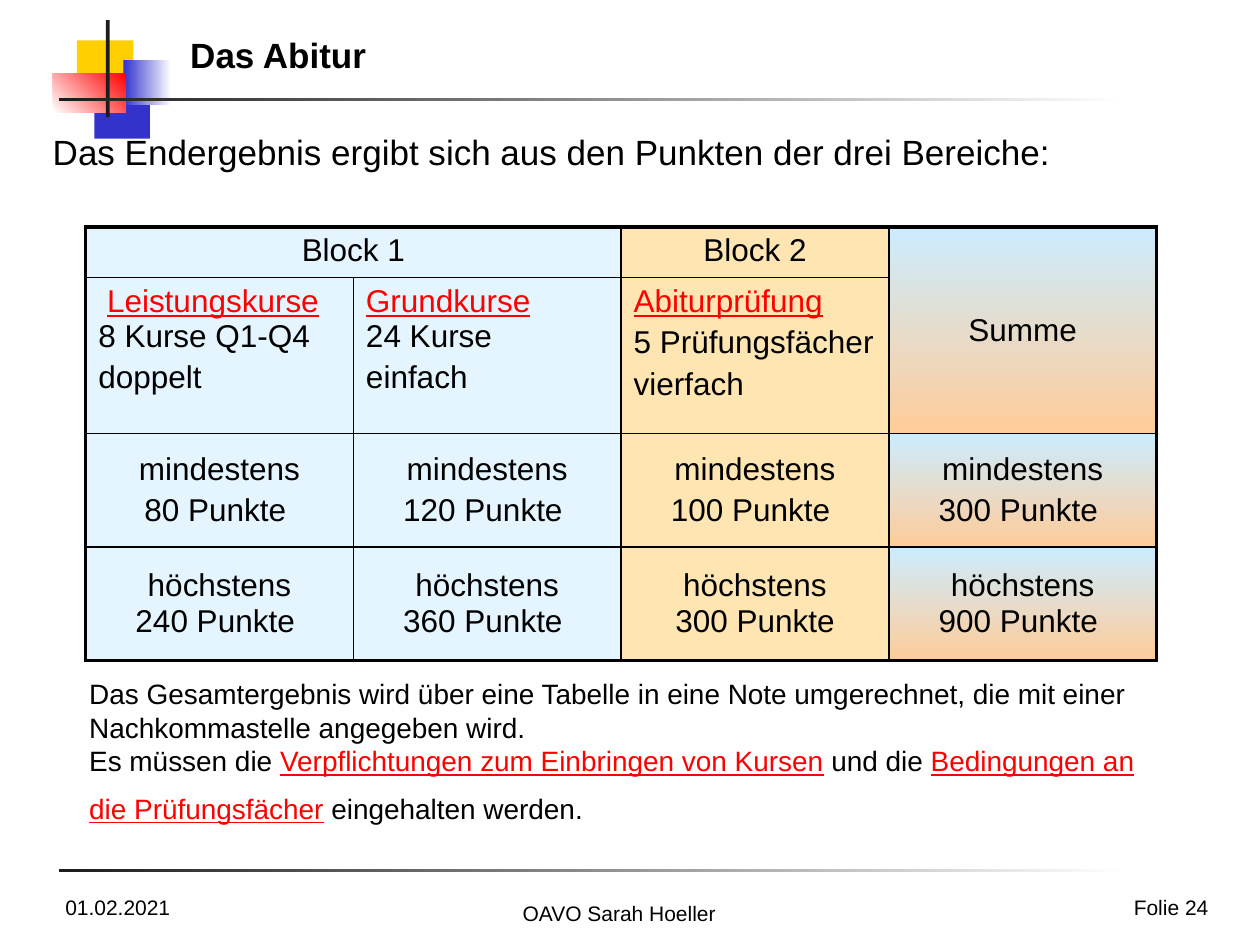
import copy
import pptx
import pptx.dml.color
import pptx.enum.shapes
import pptx.enum.text
import pptx.oxml
import pptx.oxml.ns
import pptx.util

Inches = pptx.util.Inches
Pt = pptx.util.Pt
RGBColor = pptx.dml.color.RGBColor
ALIGN = pptx.enum.text.PP_ALIGN
ANCHOR = pptx.enum.text.MSO_ANCHOR

BLACK = RGBColor(0x00, 0x00, 0x00)
WHITE = RGBColor(0xFF, 0xFF, 0xFF)
RED = RGBColor(0xFF, 0x00, 0x00)
GOLD = RGBColor(0xFF, 0xCF, 0x01)
BLUE = RGBColor(0x33, 0x33, 0xCC)
DARK = RGBColor(0x1C, 0x1C, 0x1C)
SKY = RGBColor(0xCC, 0xEC, 0xFF)
SAND = RGBColor(0xFF, 0xCC, 0x66)
PEACH = RGBColor(0xFF, 0xCC, 0x99)

LINK = {"rgb": RED, "underline": True}
THICK, THIN = 2.25, 1


class Deck:
    def __init__(self, font):
        self.font = font
        self.prs = pptx.Presentation()
        self.prs.slide_width = Inches(10)
        self.prs.slide_height = Inches(7.5)
        self.slide = self.prs.slides.add_slide(self.prs.slide_layouts[5])

    def place(self, shape, box):
        for name, val in zip(("left", "top", "width", "height"), box):
            setattr(shape, name, Inches(val))

    def paint(self, fill, tint, angle=0):
        if isinstance(tint, RGBColor):
            fill.solid()
            fill.fore_color.rgb = tint
        else:
            fill.gradient()
            fill.gradient_angle = angle
            for stop, color in zip(fill.gradient_stops, tint):
                stop.color.rgb = color

    def set_text(self, frame, paras, size, align=ALIGN.LEFT, gap=0):
        for row, parts in enumerate(paras):
            para = frame.add_paragraph() if row else frame.paragraphs[0]
            para.alignment = align
            para.space_before = Pt(gap if row else 0)
            for part in [parts] if isinstance(parts, str) else parts:
                text, form = (part, {}) if isinstance(part, str) else part
                form = {"name": self.font, "size": Pt(size), "rgb": BLACK, **form}
                for num, line in enumerate(text.split("\n")):
                    if num:
                        para.add_line_break()
                        para._p[-1].append(copy.deepcopy(run._r.rPr))
                    if line:
                        run = para.add_run()
                        run.text = line
                        for key, val in form.items():
                            font = run.font
                            setattr(font.color if key == "rgb" else font, key, val)

    def title(self, box, text):
        shape = self.slide.shapes.title
        self.place(shape, box)
        self.paint(shape.fill, WHITE)
        frame = shape.text_frame
        frame.auto_size = pptx.enum.text.MSO_AUTO_SIZE.NONE
        frame.vertical_anchor = ANCHOR.BOTTOM
        self.set_text(frame, [[(text, {"bold": True})]], 20)

    def text(self, box, paras, size, align=ALIGN.LEFT):
        frame = self.slide.shapes.add_textbox(*map(Inches, box)).text_frame
        frame.word_wrap = True
        self.set_text(frame, paras, size, align)

    def rect(self, box, tint, angle=0):
        kind = pptx.enum.shapes.MSO_SHAPE.RECTANGLE
        shape = self.slide.shapes.add_shape(kind, *map(Inches, box))
        shape.shadow.inherit = False
        shape.line.fill.background()
        self.paint(shape.fill, tint, angle)

    def border(self, cell, sides):
        props = cell._tc.get_or_add_tcPr()
        for side, width in sides.items():
            props.append(pptx.oxml.parse_xml(
                f'<a:ln{side} {pptx.oxml.ns.nsdecls("a")} w="{Pt(width)}">'
                f'<a:solidFill><a:srgbClr val="{BLACK}"/></a:solidFill></a:ln{side}>'))

    def fade(self, cell):
        fill = cell._tc.tcPr.find(pptx.oxml.ns.qn("a:solidFill"))
        fill[0].append(pptx.oxml.parse_xml(
            f'<a:alpha {pptx.oxml.ns.nsdecls("a")} val="50000"/>'))

    def table(self, box, highs, rows, tints, spans):
        wide = len(tints)
        grid = self.slide.shapes.add_table(len(rows), wide, *map(Inches, box)).table
        grid.first_row = grid.horz_banding = False
        for col in grid.columns:
            col.width = Inches(box[2] / wide)
        for row, high in zip(grid.rows, highs):
            row.height = Inches(high)
        for r, row in enumerate(rows):
            for c, paras in enumerate(row):
                cell = grid.cell(r, c)
                self.border(cell, {
                    "L": THIN if c else THICK,
                    "R": THICK if c == wide - 1 else THIN,
                    "T": THIN if r else THICK,
                    "B": THICK if r == len(rows) - 1 else THIN})
                self.paint(cell.fill, tints[c], 270)
                if isinstance(tints[c], RGBColor):
                    self.fade(cell)
                mid = r > 1 or c == wide - 1
                cell.vertical_anchor = ANCHOR.MIDDLE if mid else ANCHOR.TOP
                align = ALIGN.LEFT if r == 1 else ALIGN.CENTER
                self.set_text(cell.text_frame, paras, 18, align, 3.6)
        for start, end in spans:
            grid.cell(*start).merge(grid.cell(*end))


def main():
    deck = Deck("Arial")
    deck.rect((0.61, 0.32, 0.45, 0.35), GOLD)
    deck.rect((0.75, 0.75, 0.44, 0.35), BLUE)
    deck.rect((0.98, 0.48, 0.38, 0.35), (BLUE, WHITE))
    deck.rect((0.42, 0.58, 0.58, 0.31), (WHITE, RED), 45)
    deck.rect((0.84, 0.16, 0.03, 0.77), DARK)
    for top in (0.78, 6.9):
        deck.rect((0.47, top, 8.47, 0.02), (DARK, WHITE))

    deck.title((1.41, 0.31, 7.19, 0.34), "Das Abitur")
    deck.text((0.32, 0.99, 8.51, 0.43),
              ["Das Endergebnis ergibt sich aus den Punkten der drei Bereiche:"], 20)

    least = [["mindestens", f"{num} Punkte "] for num in (80, 120, 100, 300)]
    most = [[f"höchstens\n{num}"] for num in
            ("240 Punkte ", "360 Punkte ", "300 Punkte", "900 Punkte ")]
    rows = [
        [["Block 1"], [], ["Block 2"], ["Summe"]],
        [[[" ", ("Leistungskurse\n", LINK), "8 Kurse Q1-Q4"], "doppelt"],
         [[("Grundkurse\n", LINK), "24 Kurse"], "einfach"],
         [[("Abiturprüfung", LINK)], "5 Prüfungsfächer", "vierfach"],
         []],
        least,
        most,
    ]
    deck.table((0.68, 1.8, 8.5, 3.45), (0.4, 1.24, 0.9, 0.9), rows,
               (SKY, SKY, SAND, (SKY, PEACH)),
               [((0, 0), (0, 1)), ((0, 3), (1, 3))])

    deck.text((0.61, 5.32, 8.56, 1.3), [[
        "Das Gesamtergebnis wird über eine Tabelle in eine Note umgerechnet, "
        "die mit einer Nachkommastelle angegeben wird.\nEs müssen die ",
        ("Verpflichtungen zum Einbringen von Kursen", LINK),
        " und die ",
        ("Bedingungen an die Prüfungsfächer", LINK),
        " eingehalten werden.",
        (" ", {"name": "Times New Roman", "size": Pt(24)})]], 16)

    deck.text((0.42, 7.05, 2.33, 0.3), ["01.02.2021"], 12)
    deck.text((3.33, 7.1, 3.17, 0.24), ["OAVO Sarah Hoeller"], 12, ALIGN.CENTER)
    deck.text((7.36, 7.05, 2.33, 0.22), ["Folie 24"], 12, ALIGN.RIGHT)
    deck.prs.save("out.pptx")


if __name__ == "__main__":
    main()
